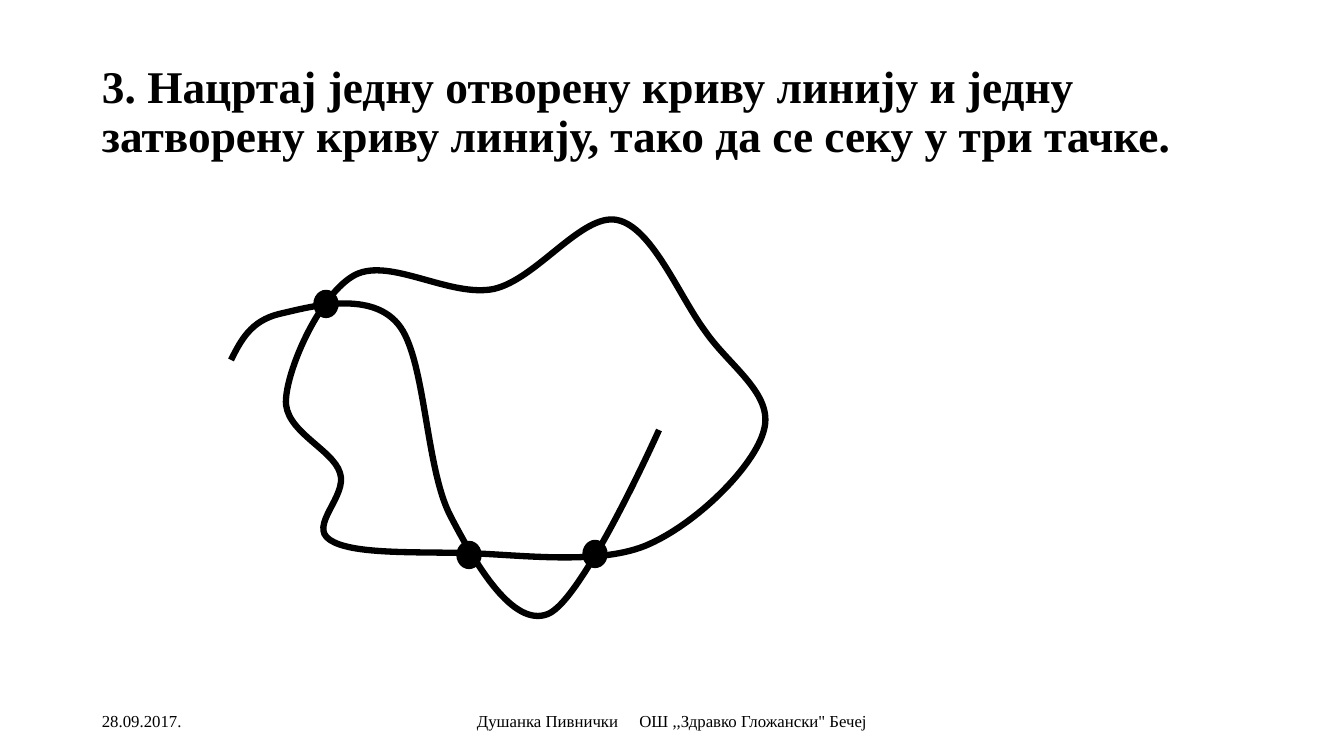
from lxml.etree import SubElement
from pptx import Presentation
from pptx.dml.color import RGBColor
from pptx.enum.shapes import MSO_SHAPE
from pptx.enum.text import MSO_ANCHOR, PP_ALIGN
from pptx.oxml.ns import qn
from pptx.util import Pt

SLIDE_SIZE = (1344, 756)
EMU_PER_PX = 12192000 / 1344
BLACK = RGBColor(0, 0, 0)
WHITE = RGBColor(255, 255, 255)
FONT = "Times New Roman"

# Each text: box (left, top, width, height), pieces parted by a wide gap, formats
TEXTS = [
    ((92, 40, 1159, 146),
     ["3. Нацртај једну отворену криву линију и једну "
      "затворену криву линију, тако да се секу у три тачке."],
     {"size": Pt(32.4), "bold": True}, {"line_spacing": 0.9}),
    ((92, 701, 302, 40), ["28.09.2017."], {"size": Pt(12)}, {}),
    ((445, 701, 454, 40),
     ["Душанка Пивнички", "ОШ ,,Здравко Гложански\" Бечеј"],
     {"size": Pt(12)}, {"alignment": PP_ALIGN.CENTER}),
]
GAP_SPACING = 1200  # extra width of the gap, in hundredths of a point

# Each curve: box, start point, then arcs of two control points and an end point
CLOSED_CURVE = ((285, 219, 480, 339), (340, 473), [
    ((333, 449), (283, 431), (286, 399)),
    ((288, 366), (321, 293), (355, 275)),
    ((390, 257), (450, 298), (494, 289)),
    ((537, 279), (582, 213), (617, 220)),
    ((652, 227), (679, 296), (705, 331)),
    ((729, 366), (774, 394), (764, 430)),
    ((755, 466), (696, 525), (645, 546)),
    ((595, 566), (514, 554), (462, 553)),
    ((409, 552), (351, 554), (330, 540)),
    ((308, 526), (348, 496), (340, 473)),
])
OPEN_CURVE = ((231, 303, 428, 313), (231, 360), [
    ((241, 340), (251, 321), (279, 314)),
    ((306, 308), (369, 289), (398, 324)),
    ((426, 357), (425, 469), (451, 517)),
    ((476, 565), (513, 628), (548, 614)),
    ((583, 600), (659, 430), (659, 430)),
])

CROSSINGS = [(326, 304), (469, 555), (595, 554)]
DOT_WIDTH, DOT_HEIGHT = 24, 27


def emu(*lengths):
    return [round(length * EMU_PER_PX) for length in lengths]


def set_all(target, values):
    for name, value in values.items():
        setattr(target, name, value)


def add_text(slide, box, pieces, font_format, paragraph_format):
    frame = slide.shapes.add_textbox(*emu(*box)).text_frame
    set_all(frame, {"word_wrap": True, "vertical_anchor": MSO_ANCHOR.MIDDLE})
    paragraph = frame.paragraphs[0]
    set_all(paragraph, paragraph_format)
    for index, piece in enumerate(pieces):
        if index:
            gap = add_run(paragraph, " ", font_format)
            gap._r.get_or_add_rPr().set("spc", str(GAP_SPACING))
        add_run(paragraph, piece, font_format)


def add_run(paragraph, text, font_format):
    run = paragraph.add_run()
    run.text = text
    set_all(run.font, {"name": FONT, **font_format})
    run.font.color.rgb = BLACK
    return run


def paint(shape, fill, line_width):
    shape.shadow.inherit = False
    if fill is None:
        shape.fill.background()
    else:
        shape.fill.solid()
        shape.fill.fore_color.rgb = fill
    shape.line.color.rgb = BLACK
    shape.line.width = Pt(line_width)


def bend(shape, box, start, arcs):
    """Turn the straight segments of a freeform into cubic Bézier arcs."""
    left, top, width, height = emu(*box)
    set_all(shape, {"left": left, "top": top, "width": width, "height": height})
    outline = next(shape._element.iter(qn("a:path")))
    outline.set("w", str(width))
    outline.set("h", str(height))

    def place(point_element, point):
        x, y = emu(*point)
        point_element.set("x", str(x - left))
        point_element.set("y", str(y - top))

    place(outline.find(qn("a:moveTo"))[0], start)
    for segment, arc in zip(outline.findall(qn("a:lnTo")), arcs):
        cubic = outline.makeelement(qn("a:cubicBezTo"))
        for point in arc:
            place(SubElement(cubic, qn("a:pt")), point)
        outline.replace(segment, cubic)


def add_curve(slide, curve, closed, fill):
    box, start, arcs = curve
    builder = slide.shapes.build_freeform(*emu(*start))
    builder.add_line_segments([emu(*arc[-1]) for arc in arcs], close=closed)
    shape = builder.convert_to_shape()
    bend(shape, box, start, arcs)
    paint(shape, fill, 4.5)


def main():
    presentation = Presentation()
    presentation.slide_width, presentation.slide_height = emu(*SLIDE_SIZE)
    slide = presentation.slides.add_slide(presentation.slide_layouts[6])

    for text in TEXTS:
        add_text(slide, *text)
    add_curve(slide, CLOSED_CURVE, True, WHITE)
    add_curve(slide, OPEN_CURVE, False, None)
    for x, y in CROSSINGS:
        box = emu(x - DOT_WIDTH / 2, y - DOT_HEIGHT / 2, DOT_WIDTH, DOT_HEIGHT)
        paint(slide.shapes.add_shape(MSO_SHAPE.OVAL, *box), BLACK, 1)

    presentation.save("out.pptx")


if __name__ == "__main__":
    main()
